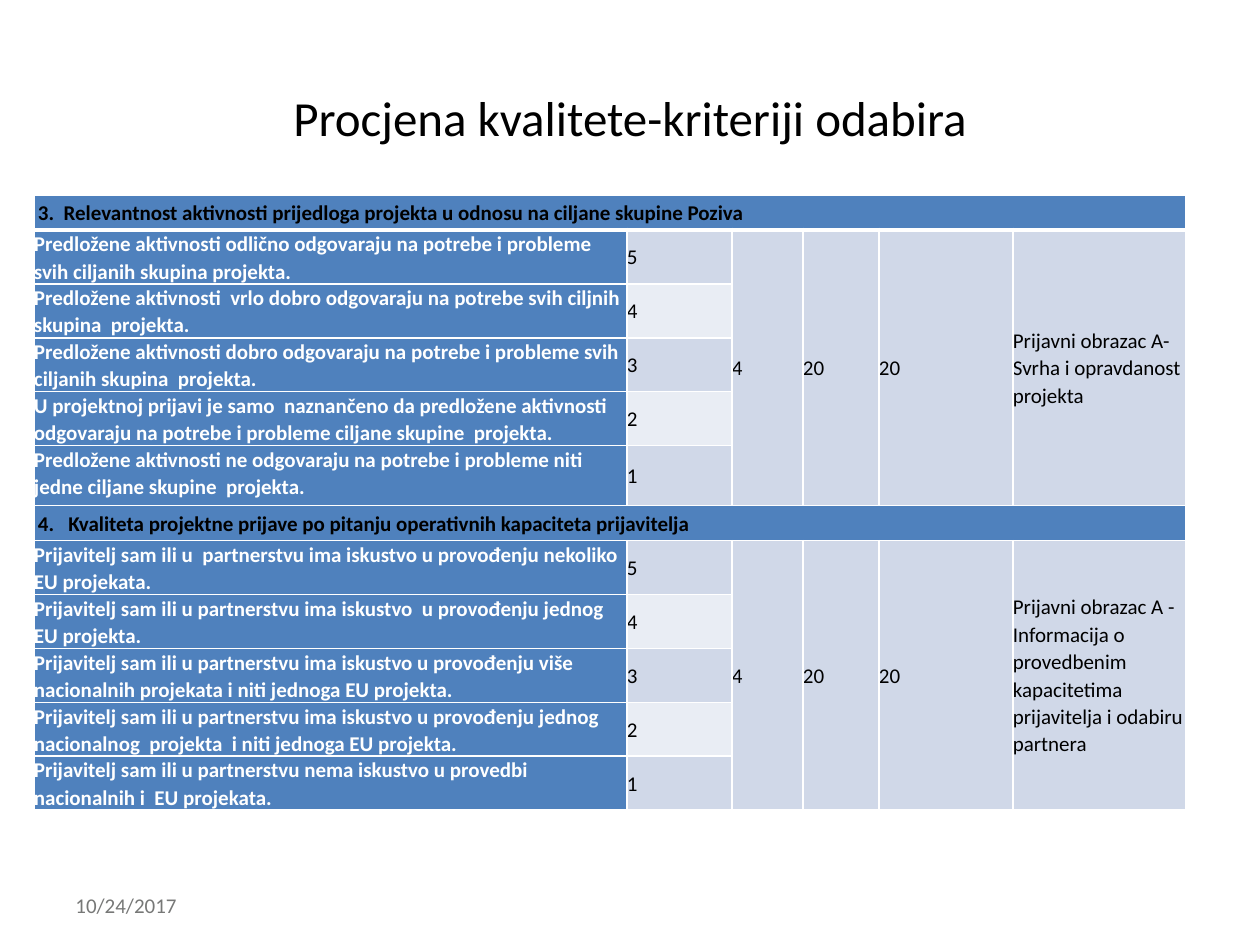
from dataclasses import dataclass

from lxml.etree import SubElement
from pptx import Presentation
from pptx.dml.color import RGBColor
from pptx.enum.text import MSO_ANCHOR, PP_ALIGN
from pptx.oxml.ns import qn
from pptx.table import Table, _Cell
from pptx.text.text import TextFrame
from pptx.util import Emu, Pt

PX = 914400 / 126
FONT = "Calibri"
COLORS = {
    "text": "000000",
    "date": "777877",
    "white": "FFFFFF",
    "accent": "4F81BD",
    "band_dark": "D0D8E8",
    "band_light": "E9EDF4",
}
COLUMN_WIDTHS = [593, 105, 71, 76, 134, 173]
ROW_HEIGHTS = [30, 50, 50, 50, 50, 60, 30, 50, 50, 50, 50, 52]


@dataclass
class Section:
    heading: str
    criteria: list[str]  # best first; the last one scores 1
    totals: list[str]  # weight, maximum, total and source form
    heading_border: int


SECTIONS = [
    Section(
        "3.  Relevantnost aktivnosti prijedloga projekta u odnosu na ciljane skupine Poziva",
        [
            "Predložene aktivnosti odlično odgovaraju na potrebe i probleme svih ciljanih skupina projekta.",
            "Predložene aktivnosti  vrlo dobro odgovaraju na potrebe svih ciljnih skupina  projekta.",
            "Predložene aktivnosti dobro odgovaraju na potrebe i probleme svih ciljanih skupina  projekta.",
            "U projektnoj prijavi je samo  naznančeno da predložene aktivnosti odgovaraju na potrebe "
            "i probleme ciljane skupine  projekta.",
            "Predložene aktivnosti ne odgovaraju na potrebe i probleme niti jedne ciljane skupine  projekta.",
        ],
        ["4", "20", "20", "Prijavni obrazac A- Svrha i opravdanost projekta"],
        3,
    ),
    Section(
        "4.   Kvaliteta projektne prijave po pitanju operativnih kapaciteta prijavitelja",
        [
            "Prijavitelj sam ili u  partnerstvu ima iskustvo u provođenju nekoliko EU projekata.",
            "Prijavitelj sam ili u partnerstvu ima iskustvo  u provođenju jednog EU projekta.",
            "Prijavitelj sam ili u partnerstvu ima iskustvo u provođenju više nacionalnih projekata "
            "i niti jednoga EU projekta.",
            "Prijavitelj sam ili u partnerstvu ima iskustvo u provođenju jednog nacionalnog  projekta  "
            "i niti jednoga EU projekta.",
            "Prijavitelj sam ili u partnerstvu nema iskustvo u provedbi nacionalnih i  EU projekata.",
        ],
        ["4", "20", "20",
         "Prijavni obrazac A - Informacija o provedbenim kapacitetima prijavitelja i odabiru partnera"],
        1,
    ),
]


def px(length: int) -> Emu:
    return Emu(round(length * PX))


def rgb(name: str) -> RGBColor:
    return RGBColor.from_string(COLORS[name])


def write(frame: TextFrame, text: str, size: int, color: str, bold: bool = False) -> None:
    frame.text = text
    font = frame.paragraphs[0].runs[0].font
    font.name, font.size, font.bold = FONT, Pt(size), bold
    font.color.rgb = rgb(color)


def set_borders(cell: _Cell, bottom: int) -> None:
    """Draw white 1 pt borders, with the given width in points below."""
    properties = cell._tc.get_or_add_tcPr()
    for position, (tag, width) in enumerate([("lnL", 1), ("lnR", 1), ("lnT", 1), ("lnB", bottom)]):
        line = SubElement(properties, qn(f"a:{tag}"), w=str(Pt(width)))
        fill = SubElement(line, qn("a:solidFill"))
        SubElement(fill, qn("a:srgbClr"), val=COLORS["white"])
        properties.insert(position, line)


def fill_cell(cell: _Cell, text: str, fill: str, color: str = "text", bold: bool = False,
              anchor: MSO_ANCHOR = MSO_ANCHOR.MIDDLE, margin: int = 0) -> None:
    cell.margin_left = cell.margin_right = cell.margin_top = cell.margin_bottom = px(margin)
    cell.vertical_anchor = anchor
    cell.fill.solid()
    cell.fill.fore_color.rgb = rgb(fill)
    write(cell.text_frame, text, 12, color, bold)
    para = cell.text_frame.paragraphs[0]
    para.line_spacing = 1.07
    para.space_after = Pt(8)


def fill_section(table: Table, top: int, section: Section) -> None:
    heading = table.cell(top, 0)
    heading.merge(table.cell(top, len(COLUMN_WIDTHS) - 1))
    fill_cell(heading, section.heading, "accent", bold=True, anchor=MSO_ANCHOR.TOP, margin=4)
    count = len(section.criteria)
    for index, criterion in enumerate(section.criteria):
        row = top + 1 + index
        fill_cell(table.cell(row, 0), criterion, "accent", "white", True, MSO_ANCHOR.TOP)
        band = "band_light" if index % 2 else "band_dark"
        fill_cell(table.cell(row, 1), str(count - index), band)
    for column, total in enumerate(section.totals, start=2):
        cell = table.cell(top + 1, column)
        cell.merge(table.cell(top + count, column))
        fill_cell(cell, total, "band_dark")
    for row in range(top, top + count + 1):
        for column in range(len(COLUMN_WIDTHS)):
            set_borders(table.cell(row, column), section.heading_border if row == top else 1)


def main() -> None:
    deck = Presentation()
    deck.slide_width, deck.slide_height = px(1260), px(945)
    page = deck.slides.add_slide(deck.slide_layouts[5])

    date = page.shapes.add_textbox(px(63), px(880), px(294), px(50)).text_frame
    date.word_wrap = True
    date.vertical_anchor = MSO_ANCHOR.MIDDLE
    write(date, "10/24/2017", 12, "date")

    title = page.shapes.title
    title.left, title.top, title.width, title.height = px(63), px(38), px(1134), px(158)
    title.text_frame.vertical_anchor = MSO_ANCHOR.MIDDLE
    write(title.text_frame, "Procjena kvalitete-kriteriji odabira", 28, "text")
    title.text_frame.paragraphs[0].alignment = PP_ALIGN.CENTER

    table = page.shapes.add_table(
        len(ROW_HEIGHTS), len(COLUMN_WIDTHS),
        px(34), px(195), px(sum(COLUMN_WIDTHS)), px(sum(ROW_HEIGHTS)),
    ).table
    for column, width in zip(table.columns, COLUMN_WIDTHS):
        column.width = px(width)
    for row, height in zip(table.rows, ROW_HEIGHTS):
        row.height = px(height)
    top = 0
    for section in SECTIONS:
        fill_section(table, top, section)
        top += len(section.criteria) + 1

    deck.save("out.pptx")


if __name__ == "__main__":
    main()
